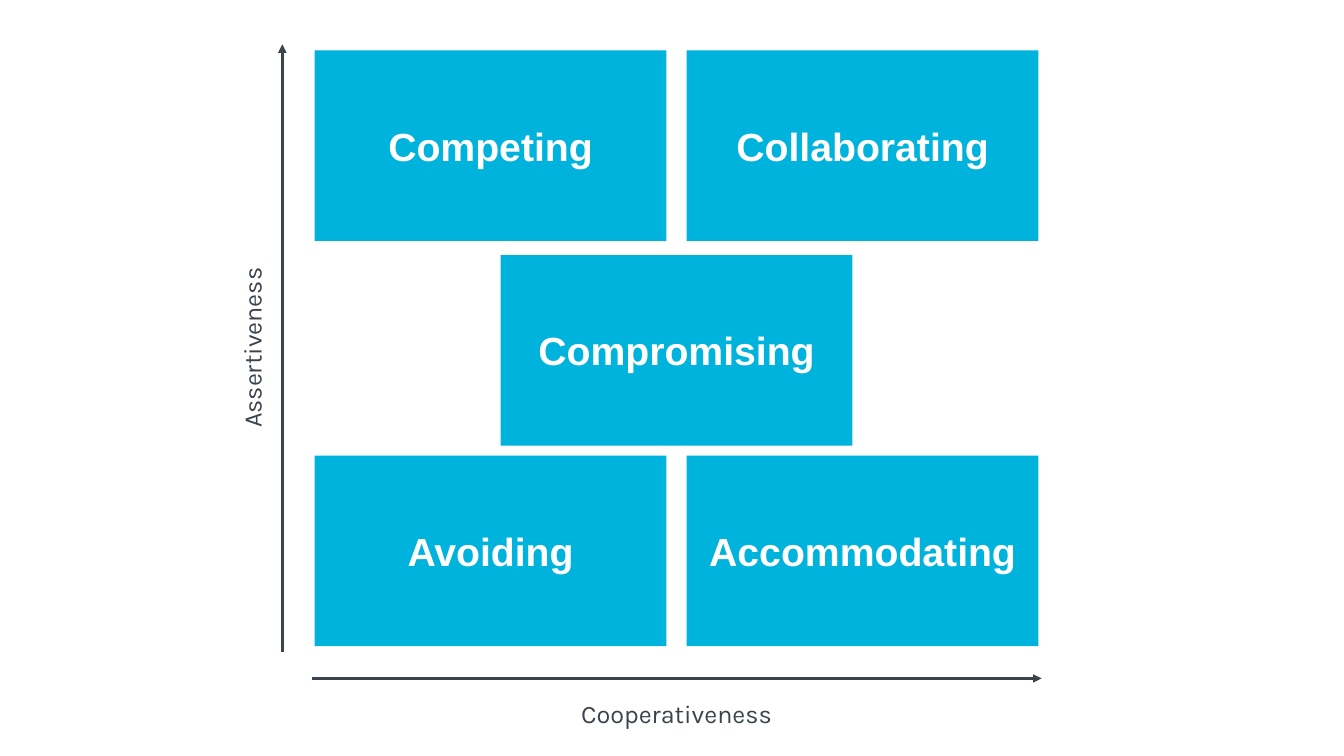
"""Build a slide of five conflict styles by assertiveness and cooperativeness."""
from pptx import Presentation
from pptx.dml.color import RGBColor
from pptx.enum.shapes import MSO_CONNECTOR, MSO_SHAPE
from pptx.enum.text import MSO_ANCHOR, PP_ALIGN
from pptx.oxml.ns import qn
from pptx.util import Inches, Pt
from lxml.etree import SubElement

BLUE, SLATE, WHITE = "00B3DC", "3B444D", "FFFFFF"
LEFT, RIGHT = 3.12, 6.81
CENTER = (LEFT + RIGHT) / 2
TOP, MIDDLE, BOTTOM = 0.5, 2.53, 4.52
BOX_WIDTH, BOX_HEIGHT = 3.49, 1.89
STYLES = [
    ("Competing", LEFT, TOP),
    ("Collaborating", RIGHT, TOP),
    ("Compromising", CENTER, MIDDLE),
    ("Avoiding", LEFT, BOTTOM),
    ("Accommodating", RIGHT, BOTTOM),
]
AXES = [
    ("Assertiveness", (2.8, 6.47, 2.8, 0.44), (-0.23, 3.24, 5.47, 0.42), 270),
    ("Cooperativeness", (3.09, 6.73, 10.33, 6.73), (3.09, 6.88, 7.24, 0.42), 0),
]


def color(value):
    return RGBColor.from_string(value)


def write(shape, text, font_name, size, text_color, bold, anchor):
    frame = shape.text_frame
    frame.word_wrap = True
    frame.vertical_anchor = anchor
    frame.margin_left = frame.margin_right = Inches(0.05)
    frame.margin_top = frame.margin_bottom = Inches(0.05)
    para = frame.paragraphs[0]
    para.text = text
    para.alignment = PP_ALIGN.CENTER
    para.font.name = font_name
    para.font.size = Pt(size)
    para.font.bold = bold
    para.font.color.rgb = color(text_color)


def add_style(slide, text, left, top):
    box = slide.shapes.add_shape(
        MSO_SHAPE.RECTANGLE, *map(Inches, (left, top, BOX_WIDTH, BOX_HEIGHT)))
    box.shadow.inherit = False
    box.fill.solid()
    box.fill.fore_color.rgb = color(BLUE)
    box.line.fill.background()
    write(box, text, "Arial", 28, WHITE, True, MSO_ANCHOR.MIDDLE)


def add_axis(slide, text, ends, label_area, rotation):
    arrow = slide.shapes.add_connector(MSO_CONNECTOR.STRAIGHT, *map(Inches, ends))
    arrow.line.color.rgb = color(SLATE)
    arrow.line.width = Pt(2)
    SubElement(arrow.line._get_or_add_ln(), qn("a:tailEnd"), type="triangle")
    SubElement(arrow._element.spPr, qn("a:effectLst"))
    label = slide.shapes.add_textbox(*map(Inches, label_area))
    label.rotation = rotation
    write(label, text, "Karla", 18, SLATE, False, MSO_ANCHOR.TOP)


def main():
    deck = Presentation()
    deck.slide_width, deck.slide_height = Inches(13.33), Inches(7.5)
    slide = deck.slides.add_slide(deck.slide_layouts[6])
    for style in STYLES:
        add_style(slide, *style)
    for axis in AXES:
        add_axis(slide, *axis)
    deck.save("out.pptx")


if __name__ == "__main__":
    main()
